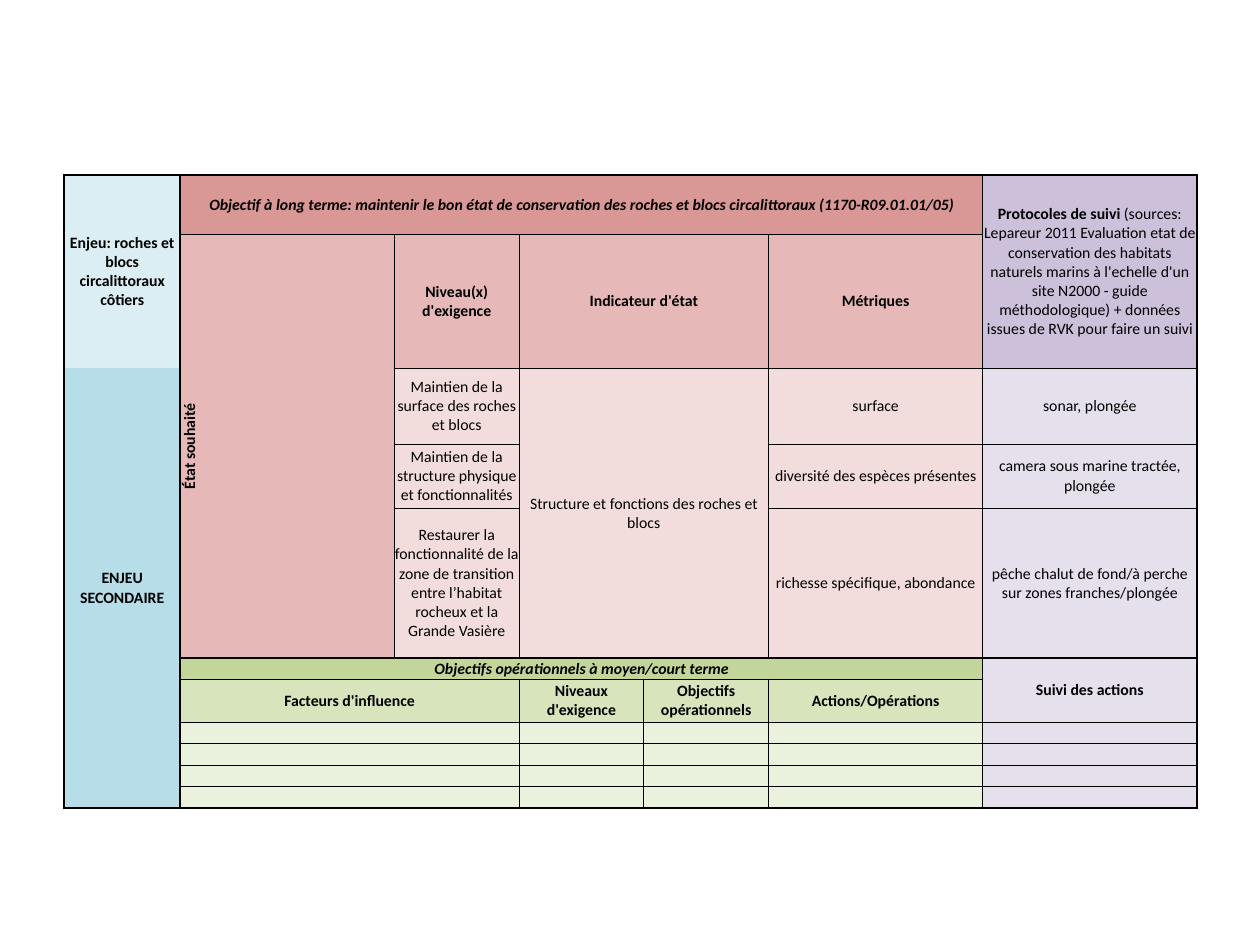
from dataclasses import dataclass

from lxml import etree
from pptx import Presentation
from pptx.dml.color import RGBColor
from pptx.enum.text import MSO_ANCHOR, PP_ALIGN
from pptx.oxml.ns import qn
from pptx.util import Inches, Pt

MIDDLE = MSO_ANCHOR.MIDDLE
CENTER = PP_ALIGN.CENTER


@dataclass(frozen=True)
class Theme:
    font: str = "Calibri"
    size: float = 9
    ink: str = "000000"
    thin: float = 0.5
    thick: float = 1
    stake: str = "DBEEF3"
    rank: str = "B6DDE8"
    goal: str = "D99795"
    state: str = "E6B9B8"
    level: str = "F2DDDC"
    survey: str = "CCC0DA"
    track: str = "E5E0EC"
    plan: str = "C2D69A"
    head: str = "D7E4BC"
    blank: str = "EAF1DD"


THEME = Theme()
COLS = [0.92, 1.7, 0.99, 0.99, 0.99, 1.7, 1.7]
ROWS = [0.47, 0.96, 0.6, 0.51, 1.19, 0.17, 0.34] + [0.17] * 4
LAST_ROW, LAST_COL = len(ROWS) - 1, len(COLS) - 1
PLAN_ROW = 5  # first row of the operational half
BOLD = {"bold": True}
TITLE = {"bold": True, "italic": True}

# Row, column, row span, column span, fill, text, format
BLOCKS = [
    # Stake column
    (0, 0, 2, 1, THEME.stake, "Enjeu: roches et blocs circalittoraux côtiers", BOLD),
    (2, 0, 9, 1, THEME.rank, "ENJEU SECONDAIRE", BOLD),
    # Long-term goal and its headings
    (0, 1, 1, 5, THEME.goal,
     "Objectif à long terme: maintenir le bon état de conservation "
     "des roches et blocs circalittoraux (1170-R09.01.01/05)", TITLE),
    (1, 1, 4, 1, THEME.state, "État souhaité", {"bold": True, "turn": True}),
    (1, 2, 1, 1, THEME.state, "Niveau(x) d'exigence", BOLD),
    (1, 3, 1, 2, THEME.state, "Indicateur d'état", BOLD),
    (1, 5, 1, 1, THEME.state, "Métriques", BOLD),
    (0, 6, 2, 1, THEME.survey, "Protocoles de suivi ",
     {"bold": True, "rest":
      "(sources: Lepareur 2011 Evaluation etat de conservation des habitats "
      "naturels marins à l'echelle d'un site N2000 - guide méthodologique) "
      "+ données issues de RVK pour faire un suivi"}),
    (2, 3, 3, 2, THEME.level, "Structure et fonctions des roches et blocs", {}),
    # Operational goals and their headings
    (5, 1, 1, 5, THEME.plan, "Objectifs opérationnels à moyen/court terme", TITLE),
    (5, 6, 2, 1, THEME.track, "Suivi des actions", BOLD),
    (6, 1, 1, 2, THEME.head, "Facteurs d'influence", BOLD),
    (6, 3, 1, 1, THEME.head, "Niveaux d'exigence", BOLD),
    (6, 4, 1, 1, THEME.head, "Objectifs opérationnels", BOLD),
    (6, 5, 1, 1, THEME.head, "Actions/Opérations", BOLD),
]

# Required level, metric and protocol of rows 2 to 4
LEVELS = [
    ("Maintien de la surface des roches et blocs", "surface", "sonar, plongée"),
    ("Maintien de la structure physique et fonctionnalités",
     "diversité des espèces présentes", "camera sous marine tractée, plongée"),
    ("Restaurer la fonctionnalité de la zone de transition entre l’habitat "
     "rocheux et la Grande Vasière", "richesse spécifique, abondance",
     "pêche chalut de fond/à perche sur zones franches/plongée"),
]


def write(cell, text, bold=False, italic=False, rest="", turn=False):
    """Put text in a cell; rest follows in regular weight."""
    cell.margin_left = cell.margin_right = 0
    cell.margin_top = cell.margin_bottom = 0
    cell.vertical_anchor = MIDDLE
    para = cell.text_frame.paragraphs[0]
    para.alignment = CENTER
    for words, heavy in ((text, bold), (rest, False)):
        if words:
            run = para.add_run()
            run.text = words
            font = run.font
            font.name, font.size = THEME.font, Pt(THEME.size)
            font.bold, font.italic = heavy, italic
            font.color.rgb = RGBColor.from_string(THEME.ink)
    if not text:  # keeps empty rows low
        end = etree.SubElement(para._p, qn("a:endParaRPr"))
        end.set("sz", str(int(THEME.size * 100)))
    if turn:
        cell._tc.get_or_add_tcPr().set("vert", "vert270")


def edge(cell, side, width):
    """Draw one cell border; a width of 0 hides it."""
    line = etree.SubElement(cell._tc.get_or_add_tcPr(), qn(f"a:ln{side}"))
    line.set("w", str(Pt(width)))
    if width:
        fill = etree.SubElement(line, qn("a:solidFill"))
        etree.SubElement(fill, qn("a:srgbClr")).set("val", THEME.ink)
    else:
        etree.SubElement(line, qn("a:noFill"))


def frame(cell, row, col, low, right):
    """Thick lines enclose the stake column and both halves."""
    def width(thick):
        return THEME.thick if thick else THEME.thin

    edge(cell, "L", width(col <= 1))
    edge(cell, "R", width(right in (0, LAST_COL)))
    edge(cell, "T", 0 if col == 0 and row else width(row in (0, PLAN_ROW)))
    edge(cell, "B", 0 if col == 0 and low < LAST_ROW
         else width(low in (PLAN_ROW - 1, LAST_ROW)))


def block(table, row, col, high, wide, color, text="", style=None):
    cell = table.cell(row, col)
    low, right = row + high - 1, col + wide - 1
    if high * wide > 1:
        cell.merge(table.cell(low, right))
    write(cell, text, **(style or {}))
    frame(cell, row, col, low, right)
    cell.fill.solid()
    cell.fill.fore_color.rgb = RGBColor.from_string(color)


def grid(slide, left, top):
    shape = slide.shapes.add_table(len(ROWS), len(COLS), Inches(left), Inches(top),
                                   Inches(sum(COLS)), Inches(sum(ROWS)))
    table = shape.table
    table.first_row = table.horz_banding = False
    for col, size in zip(table.columns, COLS):
        col.width = Inches(size)
    for row, size in zip(table.rows, ROWS):
        row.height = Inches(size)
    return table


def main():
    deck = Presentation()
    deck.slide_width, deck.slide_height = Inches(10), Inches(7.5)
    slide = deck.slides.add_slide(deck.slide_layouts[6])
    table = grid(slide, 0.51, 1.39)

    # Headings and merged cells
    for item in BLOCKS:
        block(table, *item)

    # Levels, metrics and protocols
    for row, (level, metric, survey) in enumerate(LEVELS, 2):
        block(table, row, 2, 1, 1, THEME.level, level)
        block(table, row, 5, 1, 1, THEME.level, metric)
        block(table, row, 6, 1, 1, THEME.track, survey)

    # Empty rows to fill in
    for row in range(7, len(ROWS)):
        block(table, row, 1, 1, 2, THEME.blank)
        for col in range(3, 6):
            block(table, row, col, 1, 1, THEME.blank)
        block(table, row, 6, 1, 1, THEME.track)

    deck.save("out.pptx")


if __name__ == "__main__":
    main()
